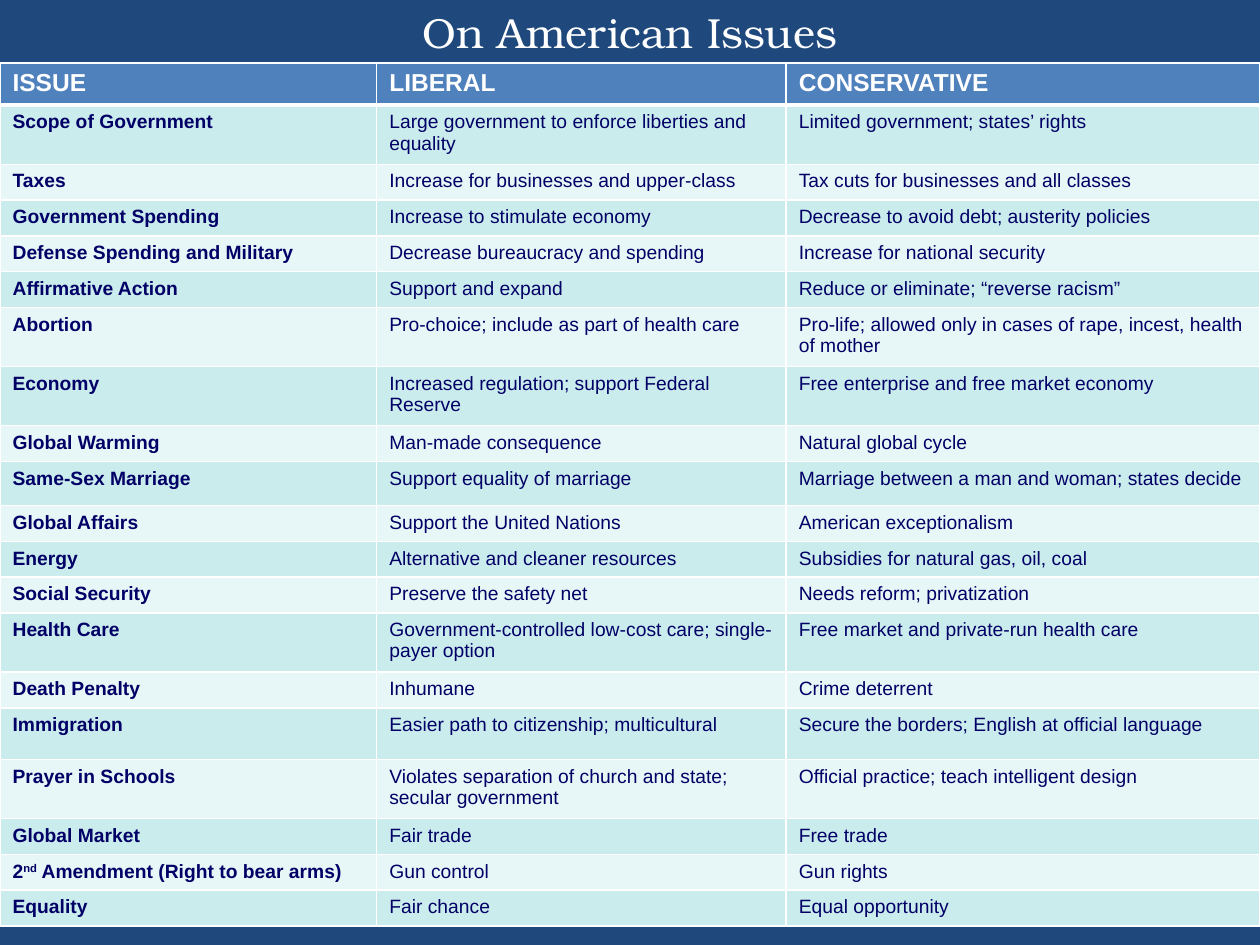
from pptx import Presentation
from pptx.dml.color import RGBColor as Rgb
from pptx.enum.text import MSO_ANCHOR as Anchor, PP_ALIGN as Align
from pptx.oxml.ns import qn
from pptx.util import Inches as In, Pt
from lxml.etree import SubElement as Sub

THEME = dict(
    back="1F497D", head="4F81BD", bands=("CBECEC", "E7F6F6"),
    line="FFFFFF", light="FFFFFF", ink="000066",
    serif="TeX Gyre Bonum", sans="Arial",
    title=24, label=14, body=11, thin=1, thick=3,
)

TITLE = "On American Issues"
HEADS = ("ISSUE", "LIBERAL", "CONSERVATIVE")
HEAD, ONE, TWO = 0.33, 0.28, 0.47  # row heights: header, one line, two lines

# Height, issue, liberal view, conservative view; ^ marks a superscript
ROWS = [
    (TWO, "Scope of Government", "Large government to enforce liberties and equality",
     "Limited government; states’ rights"),
    (ONE, "Taxes", "Increase for businesses and upper-class",
     "Tax cuts for businesses and all classes"),
    (ONE, "Government Spending", "Increase to stimulate economy",
     "Decrease to avoid debt; austerity policies"),
    (ONE, "Defense Spending and Military", "Decrease bureaucracy and spending",
     "Increase for national security"),
    (ONE, "Affirmative Action", "Support and expand",
     "Reduce or eliminate; “reverse racism”"),
    (TWO, "Abortion", "Pro-choice; include as part of health care",
     "Pro-life; allowed only in cases of rape, incest, health of mother"),
    (TWO, "Economy", "Increased regulation; support Federal Reserve",
     "Free enterprise and free market economy"),
    (ONE, "Global Warming", "Man-made consequence", "Natural global cycle"),
    (0.35, "Same-Sex Marriage", "Support equality of marriage",
     "Marriage between a man and woman; states decide"),
    (ONE, "Global Affairs", "Support the United Nations", "American exceptionalism"),
    (ONE, "Energy", "Alternative and cleaner resources",
     "Subsidies for natural gas, oil, coal"),
    (ONE, "Social Security", "Preserve the safety net", "Needs reform; privatization"),
    (TWO, "Health Care", "Government-controlled low-cost care; single-payer option",
     "Free market and private-run health care"),
    (ONE, "Death Penalty", "Inhumane", "Crime deterrent"),
    (0.41, "Immigration", "Easier path to citizenship; multicultural",
     "Secure the borders; English at official language"),
    (TWO, "Prayer in Schools", "Violates separation of church and state; secular government",
     "Official practice; teach intelligent design"),
    (ONE, "Global Market", "Fair trade", "Free trade"),
    (ONE, "2^nd^ Amendment (Right to bear arms)", "Gun control", "Gun rights"),
    (ONE, "Equality", "Fair chance", "Equal opportunity"),
]

# Grid: shares of the slide's size
WIDE, HIGH = 10, 7.5
COLS = (0.299, 0.325, 0.376)
TOP = HIGH / 15


def write(para, text, font, size, color, bold=False):
    for i, part in enumerate(text.split("^")):
        run = para.add_run()
        run.text = part
        face = run.font
        face.name, face.size, face.bold = font, Pt(size), bold
        face.color.rgb = Rgb.from_string(color)
        if i % 2:
            run._r.get_or_add_rPr().set("baseline", "30000")


def edge(cell, sides):
    props = cell._tc.get_or_add_tcPr()
    for side, width in sides.items():
        line = Sub(props, qn(f"a:ln{side}"), w=str(Pt(width)))
        Sub(Sub(line, qn("a:solidFill")), qn("a:srgbClr"), val=THEME["line"])


def add_title(slide):
    frame = slide.shapes.add_textbox(0, 0, In(WIDE), In(TOP)).text_frame
    frame.word_wrap = True
    frame.vertical_anchor = Anchor.MIDDLE
    para = frame.paragraphs[0]
    para.alignment = Align.CENTER
    write(para, TITLE, THEME["serif"], THEME["title"], THEME["light"])


def add_grid(slide):
    rows = [(HEAD, *HEADS), *ROWS]
    tall = sum(row[0] for row in rows)
    grid = slide.shapes.add_table(len(rows), len(COLS), 0, In(TOP),
                                  In(WIDE), In(tall)).table
    for col, share in zip(grid.columns, COLS):
        col.width = In(WIDE * share)
    thin, thick = THEME["thin"], THEME["thick"]
    for r, (height, *texts) in enumerate(rows):
        grid.rows[r].height = In(height)
        # The header has its own look; body rows alternate two bands
        top = r == 0
        fill = THEME["head"] if top else THEME["bands"][(r - 1) % 2]
        size = THEME["label"] if top else THEME["body"]
        color = THEME["light"] if top else THEME["ink"]
        sides = dict(L=thin, R=thin, T=thick if r == 1 else thin,
                     B=thick if top else thin)
        for c, text in enumerate(texts):
            cell = grid.cell(r, c)
            edge(cell, sides)
            cell.fill.solid()
            cell.fill.fore_color.rgb = Rgb.from_string(fill)
            write(cell.text_frame.paragraphs[0], text, THEME["sans"],
                  size, color, bold=top or c == 0)


def main():
    deck = Presentation()
    deck.slide_width, deck.slide_height = In(WIDE), In(HIGH)
    slide = deck.slides.add_slide(deck.slide_layouts[6])
    back = slide.background.fill
    back.solid()
    back.fore_color.rgb = Rgb.from_string(THEME["back"])
    add_title(slide)
    add_grid(slide)
    deck.save("out.pptx")


if __name__ == "__main__":
    main()
